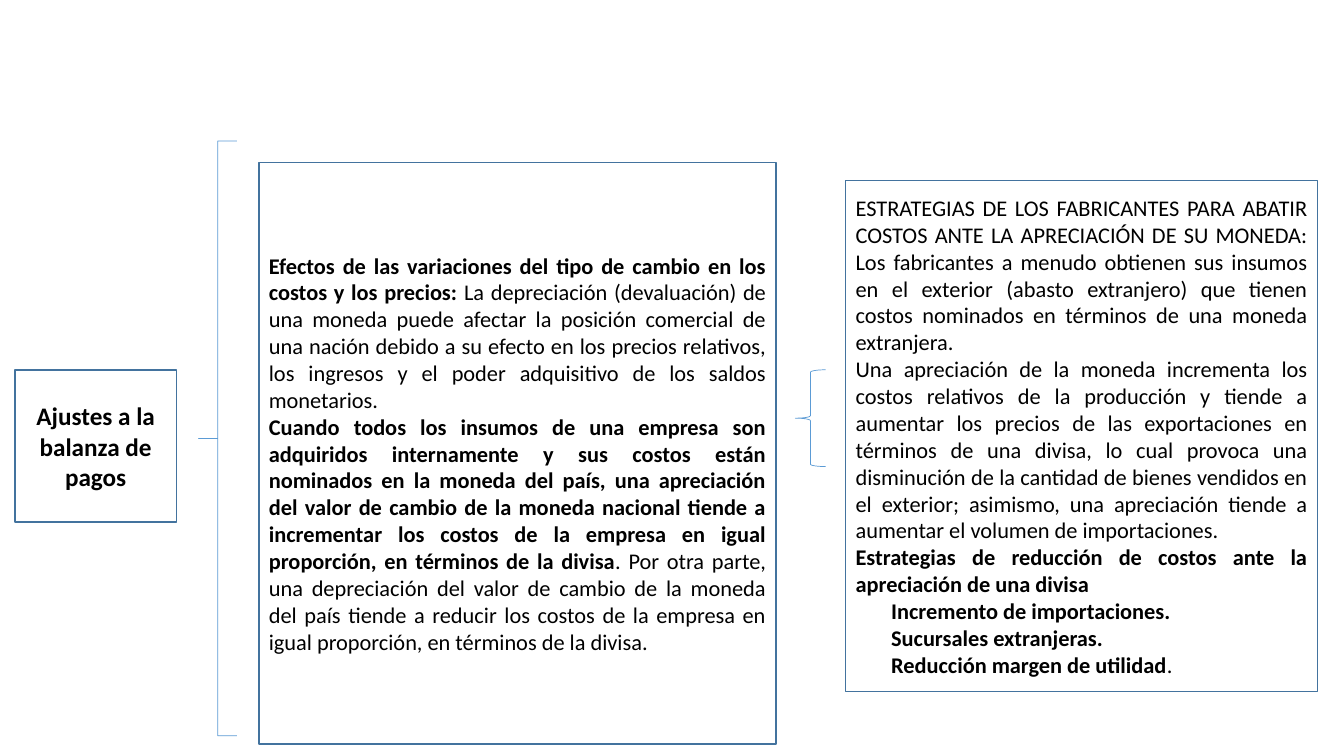
from dataclasses import dataclass

from pptx import Presentation
from pptx.dml.color import RGBColor
from pptx.enum.shapes import MSO_SHAPE
from pptx.enum.text import MSO_ANCHOR, PP_ALIGN
from pptx.util import Pt


@dataclass(frozen=True)
class Theme:
    font: str = "Calibri"
    heading_size: float = 18
    body_size: float = 16
    indent: float = 25.4
    text: RGBColor = RGBColor(0, 0, 0)
    paper: RGBColor = RGBColor(255, 255, 255)
    border: RGBColor = RGBColor(0x43, 0x73, 0x9E)
    brace: RGBColor = RGBColor(0x5B, 0x9B, 0xD5)


class Diagram:
    def __init__(self, page, theme):
        self.page = page
        self.theme = theme

    def shape(self, kind, area, color, width):
        shape = self.page.shapes.add_shape(kind, *(Pt(value) for value in area))
        shape.shadow.inherit = False
        shape.line.color.rgb = color
        shape.line.width = Pt(width)
        return shape

    def box(self, area, paragraphs, size, align):
        box = self.shape(MSO_SHAPE.RECTANGLE, area, self.theme.border, 1)
        box.fill.solid()
        box.fill.fore_color.rgb = self.theme.paper
        frame = box.text_frame
        frame.word_wrap = True
        frame.vertical_anchor = MSO_ANCHOR.MIDDLE
        for index, (indent, spans) in enumerate(paragraphs):
            para = frame.paragraphs[0] if index == 0 else frame.add_paragraph()
            para.alignment = align
            para.font.name = self.theme.font
            para.font.size = Pt(size)
            para.font.color.rgb = self.theme.text
            if indent:
                para._p.get_or_add_pPr().set("marL", str(Pt(indent)))
            for text, bold in spans:
                span = para.add_run()
                span.text = text
                span.font.bold = bold

    def brace(self, area, curve):
        brace = self.shape(MSO_SHAPE.LEFT_BRACE, area, self.theme.brace, 0.5)
        brace.fill.background()
        brace.adjustments[0] = curve
        brace.adjustments[1] = 0.5


TOPIC = [(0, [("Ajustes a la balanza de pagos", True)])]

EFFECTS = [
    (0, [
        ("Efectos de las variaciones del tipo de cambio en los costos y los precios: ", True),
        ("La depreciación (devaluación) de una moneda puede afectar la posición comercial "
         "de una nación debido a su efecto en los precios relativos, los ingresos y el "
         "poder adquisitivo de los saldos monetarios.", False),
    ]),
    (0, [
        ("Cuando todos los insumos de una empresa son adquiridos internamente y sus costos "
         "están nominados en la moneda del país, una apreciación del valor de cambio de la "
         "moneda nacional tiende a incrementar los costos de la empresa en igual "
         "proporción, en términos de la divisa", True),
        (". Por otra parte, una depreciación del valor de cambio de la moneda del país "
         "tiende a reducir los costos de la empresa en igual proporción, en términos de "
         "la divisa.", False),
    ]),
]

STRATEGIES = [
    (0, [("ESTRATEGIAS DE LOS FABRICANTES PARA ABATIR COSTOS ANTE LA APRECIACIÓN DE SU "
          "MONEDA: Los fabricantes a menudo obtienen sus insumos en el exterior (abasto "
          "extranjero) que tienen costos nominados en términos de una moneda "
          "extranjera.", False)]),
    (0, [("Una apreciación de la moneda incrementa los costos relativos de la producción y "
          "tiende a aumentar los precios de las exportaciones en términos de una divisa, "
          "lo cual provoca una disminución de la cantidad de bienes vendidos en el "
          "exterior; asimismo, una apreciación tiende a aumentar el volumen de "
          "importaciones.", False)]),
    (0, [("Estrategias de reducción de costos ante la apreciación de una divisa", True)]),
    (Theme.indent, [("Incremento de importaciones.", True)]),
    (Theme.indent, [("Sucursales extranjeras.", True)]),
    (Theme.indent, [("Reducción margen de utilidad", True), (".", False)]),
]


def main():
    deck = Presentation()
    deck.slide_width, deck.slide_height = Pt(960), Pt(540)
    theme = Theme()
    diagram = Diagram(deck.slides.add_slide(deck.slide_layouts[6]), theme)
    diagram.box((10.8, 264.2, 115.2, 108.7), TOPIC, theme.heading_size, PP_ALIGN.CENTER)
    diagram.box((185, 116, 369.4, 415.4), EFFECTS, theme.body_size, PP_ALIGN.JUSTIFY)
    diagram.brace((141.8, 100.8, 27.4, 424.8), 0)
    diagram.box((604.1, 128.9, 337, 365), STRATEGIES, theme.body_size, PP_ALIGN.JUSTIFY)
    diagram.brace((568.1, 264.2, 21.6, 69.1), 0.08)
    deck.save("out.pptx")


if __name__ == "__main__":
    main()
